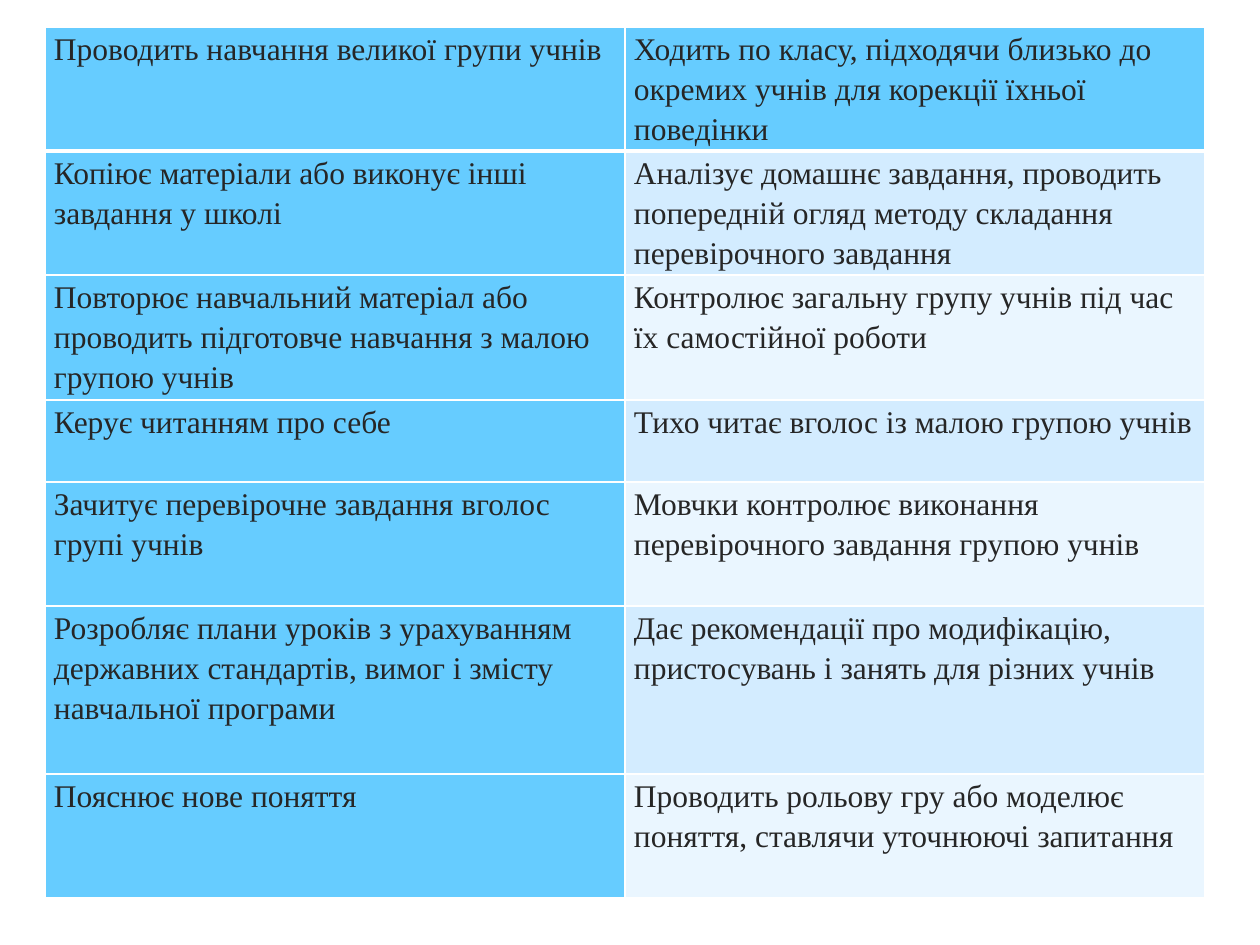
from lxml.etree import SubElement
from pptx import Presentation
from pptx.dml.color import RGBColor as Color
from pptx.oxml.ns import qn
from pptx.util import Pt

PX = 914400 / 126
THEME = {
    "font": "Times New Roman",
    "size": 18,
    "line_spacing": 1.15,
    "text": "262626",
    "accent": "66CCFF",
    "bands": ["EAF6FF", "D3ECFF"],
    "border": "FFFFFF",
    "thin": 1,
    "thick": 3,
}


def px(value):
    return round(value * PX)


def add_border(cell, side, width):
    line = SubElement(cell._tc.get_or_add_tcPr(), qn(f"a:{side}"), w=str(Pt(width)))
    fill = SubElement(line, qn("a:solidFill"))
    SubElement(fill, qn("a:srgbClr"), val=THEME["border"])


ROWS = [
    (124, "Проводить навчання великої групи учнів",
     "Ходить по класу, підходячи близько до окремих учнів для корекції їхньої поведінки"),
    (124, "Копіює матеріали або виконує інші завдання у школі",
     "Аналізує домашнє завдання, проводить попередній огляд методу складання перевірочного завдання"),
    (125, "Повторює навчальний матеріал або проводить підготовче навчання з малою групою учнів",
     "Контролює загальну групу учнів під час їх самостійної роботи"),
    (82, "Керує читанням про себе",
     "Тихо читає вголос із малою групою учнів"),
    (124, "Зачитує перевірочне завдання вголос групі учнів",
     "Мовчки контролює виконання перевірочного завдання групою учнів"),
    (168, "Розробляє плани уроків з урахуванням державних стандартів, вимог і змісту навчальної програми",
     "Дає рекомендації про модифікацію, пристосувань і занять для різних учнів"),
    (124, "Пояснює нове поняття",
     "Проводить рольову гру або моделює поняття, ставлячи уточнюючі запитання"),
]
COLUMN_WIDTH = 580

presentation = Presentation()
presentation.slide_width = px(1260)
presentation.slide_height = px(945)
slide = presentation.slides.add_slide(presentation.slide_layouts[6])

table_height = sum(height for height, *_ in ROWS)
table = slide.shapes.add_table(
    len(ROWS), 2, px(45), px(27), px(2 * COLUMN_WIDTH), px(table_height)
).table
for column in table.columns:
    column.width = px(COLUMN_WIDTH)

for row_index, (height, *texts) in enumerate(ROWS):
    table.rows[row_index].height = px(height)
    for column_index, text in enumerate(texts):
        cell = table.cell(row_index, column_index)
        cell.margin_left = cell.margin_right = px(9)
        cell.margin_top = cell.margin_bottom = 0

        cell.text_frame.text = text
        paragraph = cell.text_frame.paragraphs[0]
        paragraph.line_spacing = THEME["line_spacing"]
        font = paragraph.runs[0].font
        font.name = THEME["font"]
        font.size = Pt(THEME["size"])
        font.bold = False
        font.color.rgb = Color.from_string(THEME["text"])

        for side in ("lnL", "lnR", "lnT", "lnB"):
            under_first = (row_index, side) in ((0, "lnB"), (1, "lnT"))
            add_border(cell, side, THEME["thick"] if under_first else THEME["thin"])

        is_accent = row_index == 0 or column_index == 0
        color = THEME["accent"] if is_accent else THEME["bands"][row_index % 2]
        cell.fill.solid()
        cell.fill.fore_color.rgb = Color.from_string(color)

presentation.save("out.pptx")
